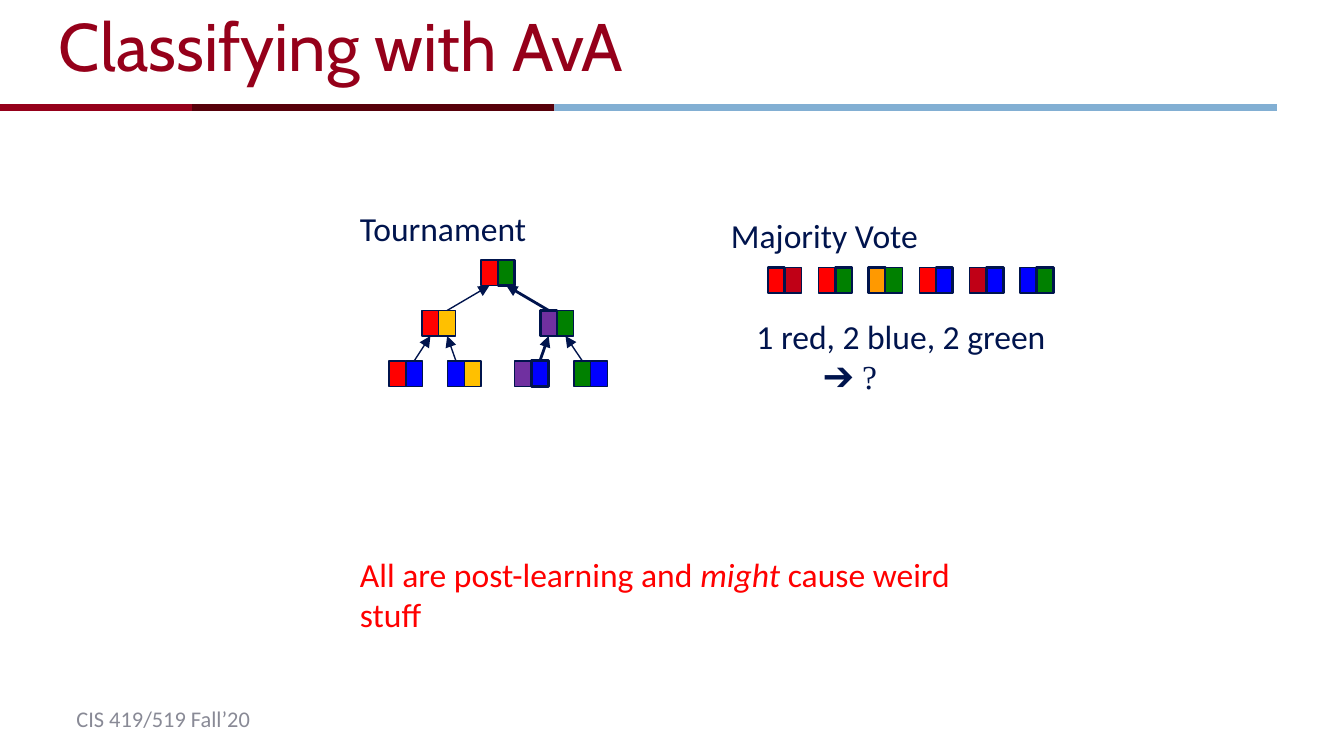
from dataclasses import dataclass
from lxml.etree import SubElement as Sub
from pptx import Presentation
from pptx.dml.color import RGBColor as Rgb
from pptx.enum.shapes import MSO_CONNECTOR as Conn, MSO_SHAPE as Kind
from pptx.enum.text import MSO_ANCHOR as Anchor, MSO_AUTO_SIZE as Auto
from pptx.oxml.ns import qn
from pptx.util import Pt

SCALE = 4572


@dataclass(frozen=True)
class Theme:
    """Colours, fonts and type sizes of the slide."""
    ink: str = "00144D"
    maroon: str = "95001A"
    dark: str = "57000A"
    sky: str = "82AFD3"
    gray: str = "898A96"
    red: str = "FF0000"
    green: str = "008000"
    blue: str = "0000FF"
    gold: str = "FFC000"
    plum: str = "7030A0"
    wine: str = "C00016"
    amber: str = "FF9900"
    head: str = "Cabin"
    body: str = "Calibri"
    serif: str = "Times New Roman"
    big: int = 36
    mid: int = 18
    small: int = 12
    thin: float = 0.75
    thick: float = 1.5


T = Theme()
CELL_W, CELL_H = 25, 38


def px(*nums):
    """Turn px lengths into EMU."""
    return [round(n * SCALE) for n in nums]


def style(run, size, color, font):
    """Set the look of one run."""
    run.font.size = Pt(size)
    run.font.name = font
    run.font.color.rgb = Rgb.from_string(color)


def write(slide, box, lines, size, color, font=T.body, wrap=False):
    """Add a text box with one paragraph per line and return its frame."""
    frame = slide.shapes.add_textbox(*px(*box)).text_frame
    frame.word_wrap = wrap
    frame.auto_size = Auto.SHAPE_TO_FIT_TEXT
    frame.text = "\n".join(lines)
    for para in frame.paragraphs:
        for run in para.runs:
            style(run, size, color, font)
    return frame


def block(slide, box, fill, line=None):
    """Add a filled rectangle, outlined when a line width is given."""
    rect = slide.shapes.add_shape(Kind.RECTANGLE, *px(*box))
    rect.shadow.inherit = False
    rect.fill.solid()
    rect.fill.fore_color.rgb = Rgb.from_string(fill)
    if line:
        rect.line.color.rgb = Rgb.from_string(T.ink)
        rect.line.width = Pt(line)
    else:
        rect.line.fill.background()
    return rect


def pair(slide, x, y, fills, bold=None):
    """Add two touching cells, the bold one with a thick outline."""
    return [block(slide, (x + i * CELL_W, y, CELL_W, CELL_H), fill,
                  T.thick if i == bold else T.thin)
            for i, fill in enumerate(fills)]


def arrow(slide, upper, lower, width):
    """Join two cells with an arrow that points at the upper one."""
    link = slide.shapes.add_connector(Conn.STRAIGHT, 0, 0, 0, 0)
    link.begin_connect(upper, 2)
    link.end_connect(lower, 0)
    link.line.color.rgb = Rgb.from_string(T.ink)
    link.line.width = Pt(width)
    Sub(link.line._get_or_add_ln(), qn("a:headEnd"), type="triangle")
    Sub(link._element.spPr, qn("a:effectLst"))


def header(slide, x, y, w):
    """Place the title and the three-part rule below it."""
    frame = write(slide, (x + 68, y + 4, w - 200, 152),
                  ["Classifying with AvA"], T.big, T.maroon, T.head, True)
    frame.auto_size = Auto.NONE
    frame.vertical_anchor = Anchor.MIDDLE
    frame.paragraphs[0].line_spacing = 0.75
    stops = (-2, 286, 825, 1900)
    for a, b, fill in zip(stops, stops[1:], (T.maroon, T.dark, T.sky)):
        block(slide, (x + a, y + 155, b - a, 10), fill)


def tourney(slide, x, y):
    """Place the tournament label, its tree of pairs and the arrows."""
    write(slide, (x, y, 290, 80), ["Tournament"], T.mid, T.ink)
    rows = (
        ((200, (T.red, T.green), 1),),
        ((112, (T.red, T.gold), None), (288, (T.plum, T.green), 0)),
        ((63, (T.red, T.blue), None), (150, (T.blue, T.gold), None),
         (250, (T.plum, T.blue), 1), (338, (T.green, T.blue), None)),
    )
    tree = [[pair(slide, x + dx, y + 87 + 75 * row, fills, bold)
             for dx, fills, bold in items] for row, items in enumerate(rows)]
    wins = ((0, 1), (0, 0, 1, 0))
    for tops, kids, marks in zip(tree, tree[1:], wins):
        for i, (kid, mark) in enumerate(zip(kids, marks)):
            side = i % 2
            arrow(slide, tops[i // 2][side], kid[1 - side],
                  T.thick if mark else T.thin)


def vote(slide, x, y):
    """Place the majority vote label, its row of pairs and the count."""
    duels = (
        ((T.red, T.wine), 0), ((T.red, T.green), 1), ((T.amber, T.green), 0),
        ((T.red, T.blue), 1), ((T.wine, T.blue), 1), ((T.blue, T.green), 1),
    )
    for i, (fills, bold) in enumerate(duels):
        pair(slide, x + 75 + 75 * i, y + 88, fills, bold)
    frame = write(slide, (x + 38, y + 150, 478, 142),
                  ["1 red, 2 blue, 2 green", "\t➔ ?"], T.mid, T.ink)
    last = frame.paragraphs[1]
    tabs = Sub(last._p.get_or_add_pPr(), qn("a:tabLst"))
    Sub(tabs, qn("a:tab"), pos=str(px(100)[0]), algn="l")
    for run in last.runs:
        run.font.name = T.serif
    write(slide, (x, y, 322, 80), ["Majority Vote"], T.mid, T.ink)


def remark(slide, x, y, w):
    """Place the closing remark with one word in italics."""
    frame = write(slide, (x, y, w, 80), ["All are post-learning and "],
                  T.mid, T.red, wrap=True)
    for text, slant in (("might", True), (" cause weird stuff", False)):
        run = frame.paragraphs[0].add_run()
        run.text = text
        style(run, T.mid, T.red, T.body)
        run.font.italic = slant


def footer(slide, x, y):
    """Place the course name."""
    write(slide, (x, y, 304, 60), ["CIS 419/519 Fall’20"], T.small, T.gray)


def main():
    """Build the slide and save it."""
    deck = Presentation()
    deck.slide_width, deck.slide_height = px(2000, 1125)
    slide = deck.slides.add_slide(deck.slide_layouts[6])
    footer(slide, 94, 1040)
    header(slide, 0, 0, 2000)
    tourney(slide, 516, 300)
    vote(slide, 1068, 310)
    remark(slide, 516, 814, 1018)
    deck.save("out.pptx")


if __name__ == "__main__":
    main()
